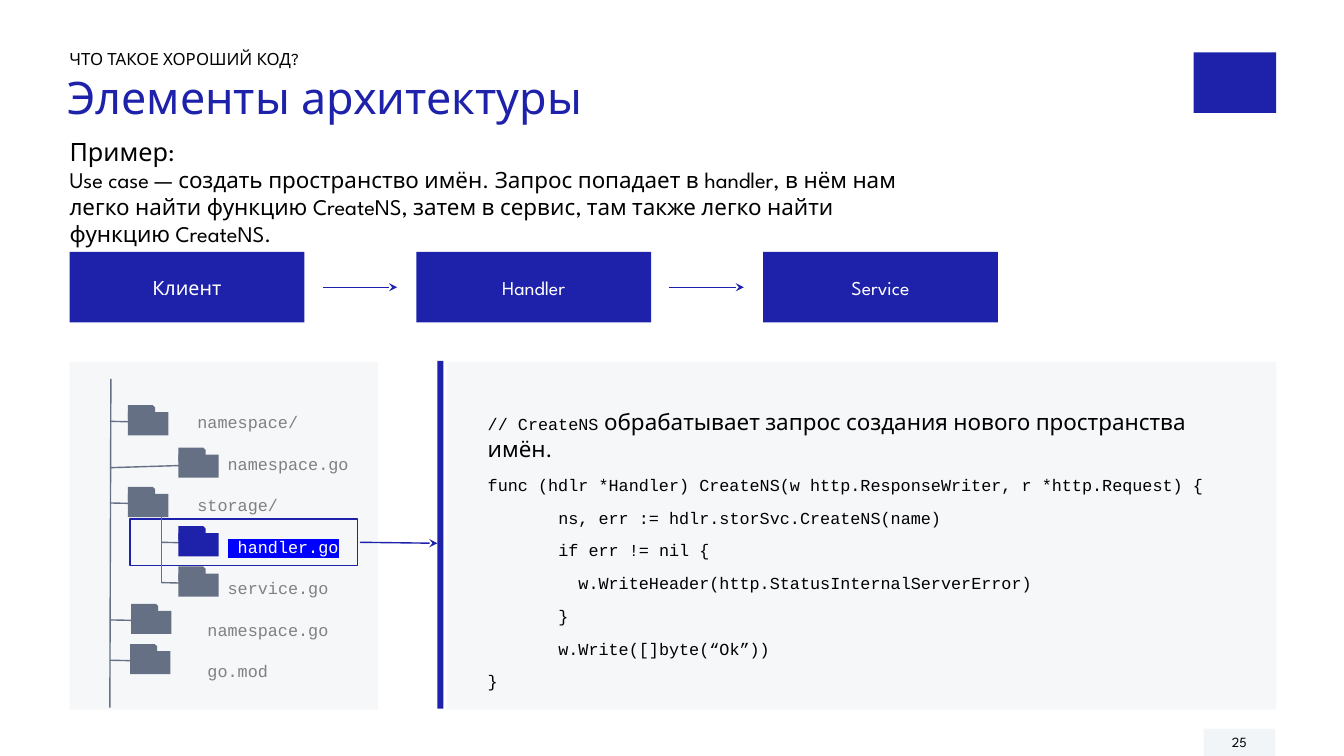
from dataclasses import dataclass
from typing import NamedTuple

from lxml import etree
from pptx import Presentation
from pptx import util as u
from pptx.dml import color
from pptx.enum import shapes, text
from pptx.oxml import ns

CELL = u.Inches(0.1)  # grid pitch, both ways
COLS, ROWS = 133.33, 75
SANS, MONO = "League Spartan", "Courier New"
HUES = {
    "blue": "1E22AA", "slate": "667085", "pale": "F5F7F9", "chip": "F2F5F8",
    "gray": "808080", "mark": "0000FF", "black": "000000", "white": "FFFFFF",
}
RECT = shapes.MSO_SHAPE.RECTANGLE
CENTER = text.PP_ALIGN.CENTER


class Box(NamedTuple):
    col: float
    row: float
    cols: float
    rows: float


@dataclass
class Item:
    """One entry of the file tree: a folder icon, its branch and its label."""
    name: str
    indent: int
    col: float
    row: float
    stem: float = 10.9
    drop: float = 1.6
    hue: str = "slate"


TREE = [
    Item("namespace/", 4, 12.7, 40.2),
    Item("namespace.go", 7, 17.7, 44.4, drop=2),
    Item("storage/", 4, 12.7, 48.3),
    Item("\u00a0handler.go".replace("\u00a0", " "), 7, 17.7, 52.2, stem=16, hue="blue"),
    Item("service.go", 7, 17.7, 56.2, stem=16),
    Item("namespace.go", 5, 13, 59.9),
    Item("go.mod", 5, 12.9, 63.9),
]
STEPS = ["Клиент", "Handler", "Service"]
CODE = [
    "func (hdlr *Handler) CreateNS(w http.ResponseWriter, r *http.Request) {",
    "\t  ns, err := hdlr.storSvc.CreateNS(name)",
    "\t  if err != nil {",
    "\t    w.WriteHeader(http.StatusInternalServerError)",
    "\t  }",
    "\t  w.Write([]byte(“Ok”))",
    "}",
]


def grid(cells: float) -> int:
    return round(cells * CELL)


def rgb(hue: str) -> color.RGBColor:
    return color.RGBColor.from_string(HUES[hue])


def style(font, size: float, hue: str = "black", face: str = SANS) -> None:
    font.size, font.name = u.Pt(size), face
    font.color.rgb = rgb(hue)


def shape(page, box: Box, fill: str = "", line: str = "", kind=RECT):
    item = page.shapes.add_shape(kind, *map(grid, box))
    item.shadow.inherit = False
    if fill:
        item.fill.solid()
        item.fill.fore_color.rgb = rgb(fill)
    else:
        item.fill.background()
    if line:
        item.line.color.rgb = rgb(line)
        item.line.width = u.Pt(1)
    else:
        item.line.fill.background()
    return item


def label(item, words: str, size: float, hue: str) -> None:
    """Centre one line of text in a shape."""
    frame = item.text_frame
    frame.vertical_anchor = text.MSO_ANCHOR.MIDDLE
    para = frame.paragraphs[0]
    para.text, para.alignment = words, CENTER
    style(para.font, size, hue)


def link(page, start: tuple, end: tuple, hue: str = "slate", arrow: bool = False) -> None:
    wire = page.shapes.add_connector(
        shapes.MSO_CONNECTOR.STRAIGHT, *map(grid, (*start, *end)))
    wire.line.color.rgb = rgb(hue)
    wire.line.width = u.Pt(1)
    if arrow:
        etree.SubElement(wire.line._get_or_add_ln(), ns.qn("a:tailEnd"), type="stealth")
    etree.SubElement(wire._element.spPr, ns.qn("a:effectLst"))


def write(page, box: Box):
    frame = page.shapes.add_textbox(*map(grid, box)).text_frame
    frame.word_wrap = True
    return frame


def place(holder, box: Box):
    """Move a placeholder and give it plain top-left text."""
    holder.left, holder.top, holder.width, holder.height = map(grid, box)
    frame = holder.text_frame
    frame.word_wrap, frame.auto_size = True, text.MSO_AUTO_SIZE.NONE
    frame.vertical_anchor = text.MSO_ANCHOR.TOP
    para = frame.paragraphs[0]
    para.alignment, para.space_before = text.PP_ALIGN.LEFT, u.Pt(0)
    return para


def head(page) -> None:
    para = write(page, Box(5.9, 4.3, 46.2, 3)).paragraphs[0]
    para.text = "ЧТО ТАКОЕ ХОРОШИЙ КОД?"
    style(para.font, 12)

    para = place(page.shapes.title, Box(5.7, 7.2, 107.6, 5.5))
    para.text, para.line_spacing = "Элементы архитектуры", 0.85
    style(para.font, 32, "blue")

    para = place(page.placeholders[1], Box(5.9, 13, 88.2, 10.3))
    props = para._p.get_or_add_pPr()
    props.set("marL", "0")
    props.set("indent", "0")
    etree.SubElement(props, ns.qn("a:buNone"))
    run = para.add_run()
    run.text = "Пример:"
    style(run.font, 18)
    para.add_line_break()
    run = para.add_run()
    run.text = ("Use case — создать пространство имён. Запрос попадает в handler, "
                "в нём нам легко найти функцию CreateNS, затем в сервис, "
                "там также легко найти функцию CreateNS.")
    style(run.font, 16)


def flow(page) -> None:
    pitch = 34.4
    for i, step in enumerate(STEPS):
        col = 6.9 + i * pitch
        label(shape(page, Box(col, 25, 23.3, 7), "blue"), step, 14, "white")
        if i:
            link(page, (col - 9.3, 28.5), (col - 1.9, 28.5), "blue", True)


def code(page) -> None:
    shape(page, Box(44.3, 35.9, 82.3, 34.5), "pale")
    shape(page, Box(43.4, 35.8, 0.6, 34.5), "blue")
    frame = write(page, Box(47.4, 40, 74.8, 26.7))
    para = frame.paragraphs[0]
    para.space_after = u.Pt(9)
    for words, size, face in (
            ("// CreateNS", 12, MONO),
            (" обрабатывает запрос создания нового пространства имён.", 16, SANS)):
        run = para.add_run()
        run.text = words
        style(run.font, size, face=face)
    for row in CODE:
        para = frame.add_paragraph()
        para.text, para.space_after = row, u.Pt(9)
        style(para.font, 12, face=MONO)


def folder(page, item: Item) -> None:
    shape(page, Box(item.col, item.row + 0.7, 4, 2.3), item.hue)
    flap = shape(page, Box(item.col, item.row, 2.7, 1.4), item.hue,
                 kind=shapes.MSO_SHAPE.SNIP_1_RECTANGLE)
    flap.adjustments[0] = 0.17


def tree(page) -> None:
    shape(page, Box(6.9, 35.9, 30.6, 34.5), "pale")
    shape(page, Box(12.9, 51.5, 22.6, 4.6), line="blue")
    link(page, (35.7, 53.8), (43.4, 53.9), "blue", True)
    link(page, (10.9, 70.2), (11, 37.6))
    link(page, (16, 57.8), (16, 50.5))
    frame = write(page, Box(14.6, 40.4, 27.8, 28.9))
    for i, item in enumerate(TREE):
        link(page, (item.col + 2.9, item.row + 1.7), (item.stem, item.row + item.drop))
        folder(page, item)
        para = frame.add_paragraph() if i else frame.paragraphs[0]
        para._p.get_or_add_pPr().set("marL", str(grid(item.indent)))
        para.space_before = u.Pt(15.2 if i else 0)
        run = para.add_run()
        run.text = item.name
        picked = item.hue == "blue"
        style(para.font, 12, "white" if picked else "gray", MONO)
        if picked:
            glow = etree.SubElement(run.font._element, ns.qn("a:highlight"))
            etree.SubElement(glow, ns.qn("a:srgbClr"), val=HUES["mark"])


def main() -> None:
    deck = Presentation()
    deck.slide_width, deck.slide_height = grid(COLS), grid(ROWS)
    page = deck.slides.add_slide(deck.slide_layouts[1])
    shape(page, Box(118.4, 5.2, 8.2, 6), "blue")
    label(shape(page, Box(119.4, 72.3, 7.1, 2.7), "chip"), "25", 10, "black")
    head(page)
    flow(page)
    code(page)
    tree(page)
    deck.save("out.pptx")


if __name__ == "__main__":
    main()
